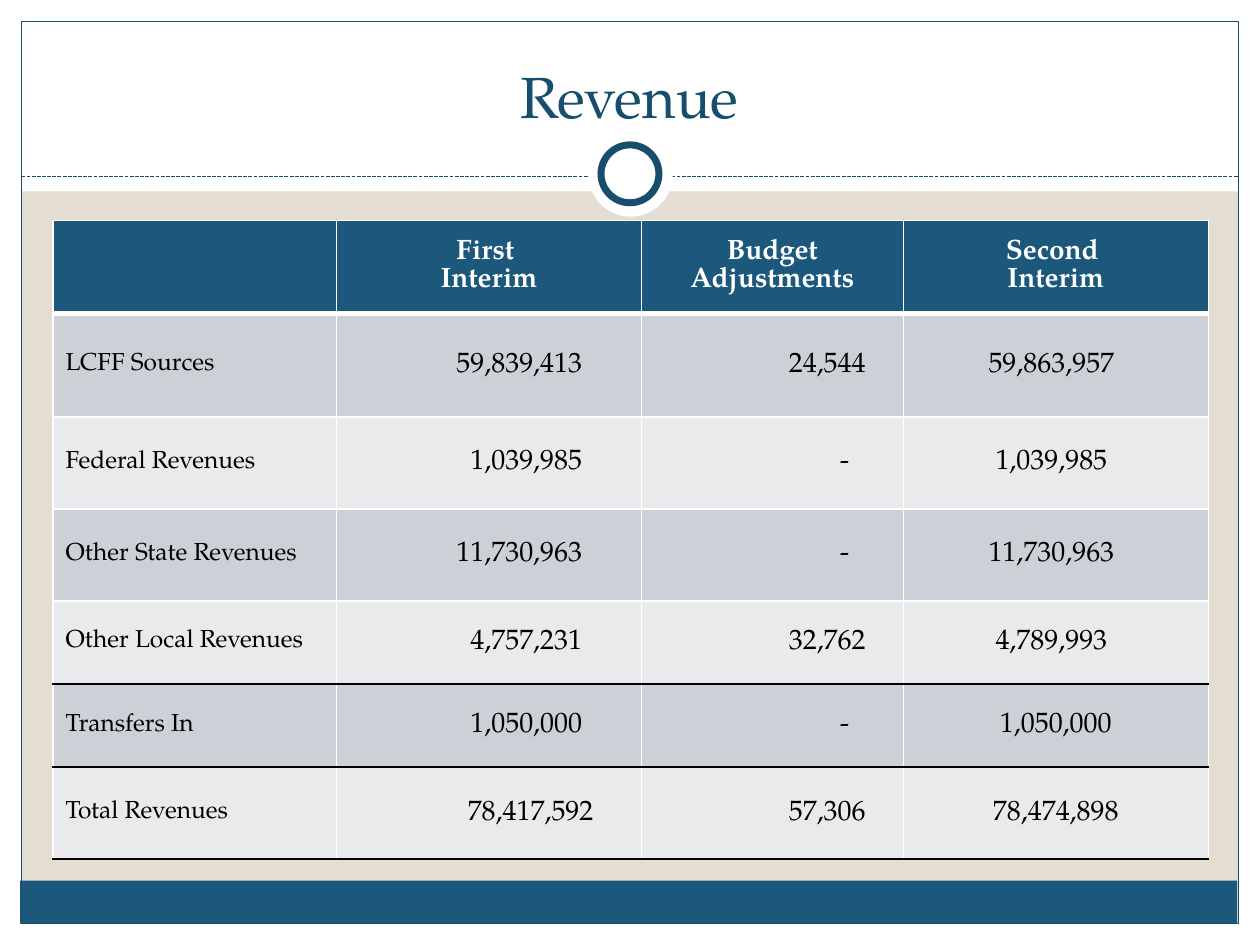
from dataclasses import dataclass
from typing import Optional

from lxml.etree import SubElement
from pptx import Presentation
from pptx.dml.color import RGBColor
from pptx.enum.dml import MSO_LINE
from pptx.enum.shapes import MSO_CONNECTOR, MSO_SHAPE
from pptx.enum.text import MSO_ANCHOR as Anchor, PP_ALIGN as Align
from pptx.oxml.ns import qn
from pptx.util import Inches, Pt

FONT = "TeX Gyre Pagella"
WHITE = RGBColor(0xFF, 0xFF, 0xFF)
BLACK = RGBColor(0, 0, 0)
SAND = RGBColor(0xE3, 0xDE, 0xD1)
BLUE = RGBColor(0x1B, 0x58, 0x7C)
NAVY = RGBColor(0x18, 0x4E, 0x6D)
GREY = RGBColor(0xCD, 0xD1, 0xD7)
PALE = RGBColor(0xE8, 0xEA, 0xEC)


@dataclass
class Block:
    left: float
    top: float
    width: float
    height: float
    fill: Optional[RGBColor] = WHITE
    line: float = 0
    kind: MSO_SHAPE = MSO_SHAPE.RECTANGLE


@dataclass
class Row:
    label: str
    first: str
    change: str
    second: str
    height: float


FRAME = [
    Block(0, 7.33, 10, 0.17),
    Block(0, 0, 10, 1.52),
    Block(0, 0, 0.17, 7.5),
    Block(9.83, 0, 0.17, 7.5),
    Block(0.16, 6.99, 9.66, 0.34, BLUE),
    Block(0.17, 0.17, 9.66, 7.16, None, 0.75),
]
RING = [
    Block(4.67, 1.05, 0.67, 0.67, kind=MSO_SHAPE.OVAL),
    Block(4.77, 1.15, 0.46, 0.46, line=4, kind=MSO_SHAPE.OVAL),
]
WIDTHS = [2.25, 2.42, 2.08, 2.42]
ROWS = [
    Row("", "First \nInterim", "Budget Adjustments", "Second \nInterim", 0.74),
    Row("LCFF Sources", "59,839,413", "24,544", "59,863,957", 0.82),
    Row("Federal Revenues", "1,039,985", "-", "1,039,985", 0.73),
    Row("Other State Revenues", "11,730,963", "-", "11,730,963", 0.73),
    Row("Other Local Revenues", "4,757,231", "32,762", "4,789,993", 0.66),
    Row("Transfers In", "1,050,000", "-", "1,050,000", 0.66),
    Row("Total Revenues", "78,417,592", "57,306", "78,474,898", 0.73),
]
LAST = len(ROWS) - 1
RULED = LAST - 2


def draw_block(slide, block: Block) -> None:
    shape = slide.shapes.add_shape(
        block.kind, Inches(block.left), Inches(block.top),
        Inches(block.width), Inches(block.height))
    shape.shadow.inherit = False
    if block.fill is None:
        shape.fill.background()
    else:
        shape.fill.solid()
        shape.fill.fore_color.rgb = block.fill
    if block.line:
        shape.line.color.rgb = NAVY
        shape.line.width = Pt(block.line)
    else:
        shape.line.fill.background()


def draw_rule(slide) -> None:
    rule = slide.shapes.add_connector(
        MSO_CONNECTOR.STRAIGHT, Inches(0.17), Inches(1.4), Inches(9.83), Inches(1.4))
    rule.line.color.rgb = NAVY
    rule.line.width = Pt(0.75)
    rule.line.dash_style = MSO_LINE.SQUARE_DOT
    SubElement(rule._element.spPr, qn("a:effectLst"))


def style_text(frame, size: float, color: RGBColor, align: Align, bold: bool = False) -> None:
    for para in frame.paragraphs:
        para.alignment = align
        for run in para.runs:
            font = run.font
            font.name, font.size, font.bold = FONT, Pt(size), bold
            font.color.rgb = color


def draw_title(slide) -> None:
    box = slide.shapes.add_textbox(Inches(0.33), Inches(0.25), Inches(9.33), Inches(0.83))
    frame = box.text_frame
    frame.word_wrap = True
    frame.vertical_anchor = Anchor.BOTTOM
    frame.text = "Revenue"
    style_text(frame, 33, NAVY, Align.CENTER)


def set_edge(cell, side: str, color: RGBColor, width: float) -> None:
    edge = SubElement(cell._tc.get_or_add_tcPr(), qn(f"a:{side}"), w=str(Pt(width)))
    paint = SubElement(edge, qn("a:solidFill"))
    SubElement(paint, qn("a:srgbClr"), val=str(color))


def set_edges(cell, row: int) -> None:
    set_edge(cell, "lnL", WHITE, 1)
    set_edge(cell, "lnR", WHITE, 1)
    set_edge(cell, "lnT", BLACK if row > RULED else WHITE, 3 if row == 1 else 1)
    set_edge(cell, "lnB", BLACK if row >= RULED else WHITE, 3 if row == 0 else 1)


def right_gap(row: int, col: int, text: str) -> float:
    if col == 1:
        return 0.38 if row == LAST else 0.47
    if col == 2:
        return 0.43 if text == "-" else 0.3
    return 0.1 if row > RULED + 0 else 0.08


def fill_cell(cell, row: int, col: int, text: str) -> None:
    set_edges(cell, row)
    cell.fill.solid()
    cell.fill.fore_color.rgb = BLUE if row == 0 else GREY if row % 2 else PALE
    cell.vertical_anchor = Anchor.MIDDLE
    cell.text_frame.text = text
    if row == 0:
        style_text(cell.text_frame, 16, WHITE, Align.CENTER, True)
    elif col == 0:
        style_text(cell.text_frame, 14, BLACK, Align.LEFT)
    else:
        centred = col == 3
        cell.margin_left = Inches(0.1 if centred and row > RULED else 0.01)
        cell.margin_right = Inches(right_gap(row, col, text))
        cell.margin_top, cell.margin_bottom = Inches(0.01), 0
        style_text(cell.text_frame, 16, BLACK, Align.CENTER if centred else Align.RIGHT)


def draw_table(slide) -> None:
    table = slide.shapes.add_table(
        len(ROWS), len(WIDTHS), Inches(0.42), Inches(1.75),
        Inches(sum(WIDTHS)), Inches(sum(row.height for row in ROWS))).table
    for col, width in enumerate(WIDTHS):
        table.columns[col].width = Inches(width)
    for num, row in enumerate(ROWS):
        table.rows[num].height = Inches(row.height)
        for col, text in enumerate((row.label, row.first, row.change, row.second)):
            fill_cell(table.cell(num, col), num, col, text)


def main() -> None:
    deck = Presentation()
    deck.slide_width, deck.slide_height = Inches(10), Inches(7.5)
    slide = deck.slides.add_slide(deck.slide_layouts[6])
    slide.background.fill.solid()
    slide.background.fill.fore_color.rgb = SAND
    for block in FRAME:
        draw_block(slide, block)
    draw_rule(slide)
    for block in RING:
        draw_block(slide, block)
    draw_title(slide)
    draw_table(slide)
    deck.save("out.pptx")


if __name__ == "__main__":
    main()
